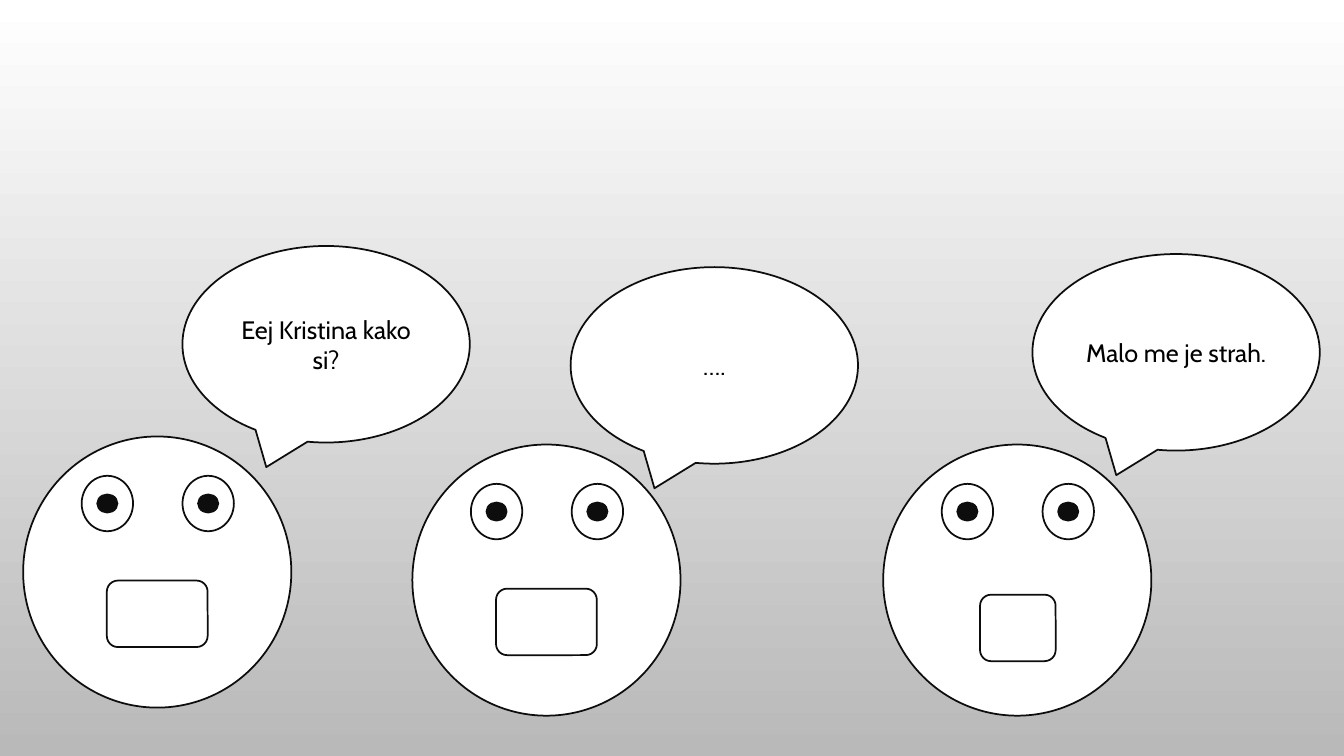
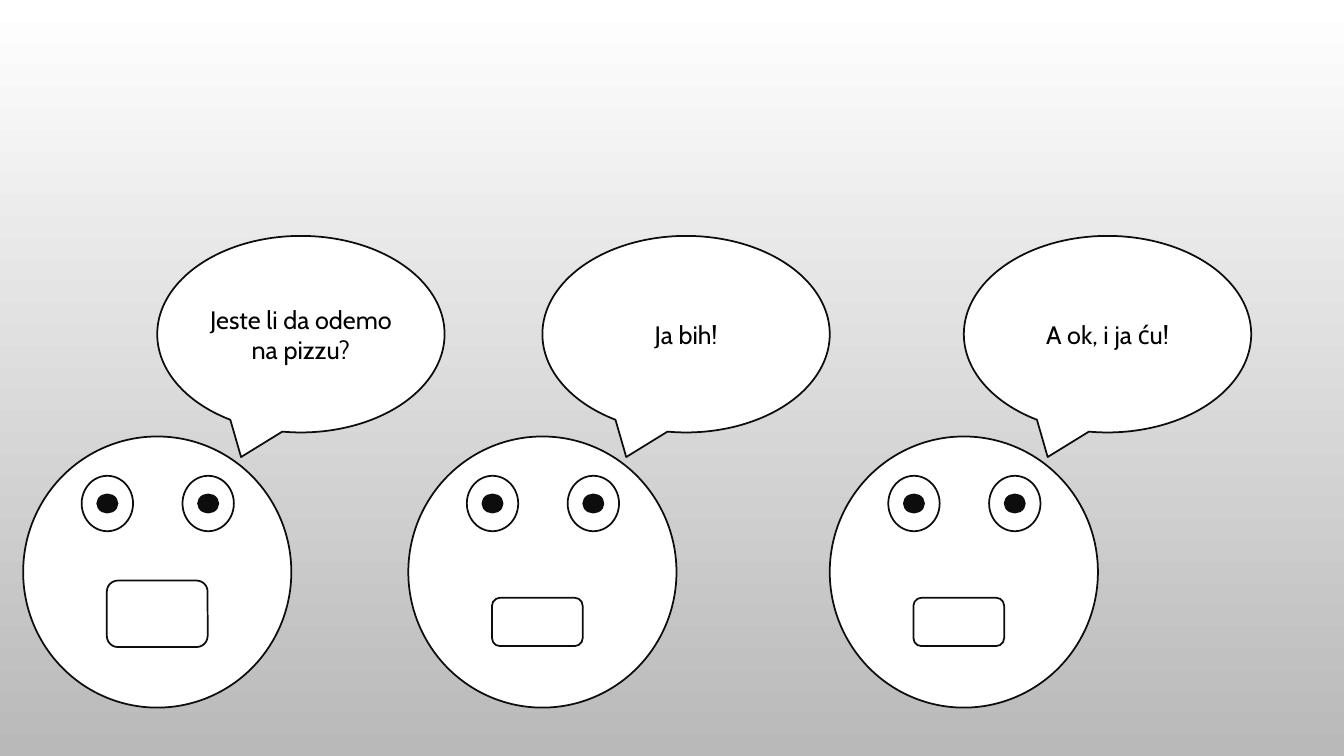
from dataclasses import dataclass

from pptx import Presentation
from pptx.dml.color import RGBColor
from pptx.enum.shapes import MSO_SHAPE
from pptx.enum.text import MSO_ANCHOR, PP_ALIGN
from pptx.util import Inches, Pt

OVAL = MSO_SHAPE.OVAL
ROUND = MSO_SHAPE.ROUNDED_RECTANGLE
CALLOUT = MSO_SHAPE.OVAL_CALLOUT
CENTER = PP_ALIGN.CENTER
MIDDLE = MSO_ANCHOR.MIDDLE


@dataclass(frozen=True)
class Theme:
    white: RGBColor = RGBColor(0xFF, 0xFF, 0xFF)
    gray: RGBColor = RGBColor(0xB9, 0xB9, 0xB9)
    ink: RGBColor = RGBColor(0x0D, 0x0D, 0x0D)
    text: RGBColor = RGBColor(0, 0, 0)
    font: str = "Cabin"
    size: Pt = Pt(18)
    line: Pt = Pt(1.25)


THEME = Theme()

# Sizes, and offsets from the top left corner of a head
HEAD = (2.66, 2.69)
EYE = (0.51, 0.55)
PUPIL = (0.2, 0.18)
BUBBLE = (2.85, 1.95)
EYES = (0.58, 1.58)
EYE_TOP = 0.39

# Mouths: left and top offset, width, height
WIDE = (0.83, 1.43, 1, 0.66)
SHORT = (0.96, 1.49, 0.75, 0.66)
SLIM = (0.83, 1.6, 0.9, 0.48)

# Each speaker: head corner, mouth, bubble offset, words
SCENES = [
    [
        ((0.23, 4.33), WIDE, (1.58, -1.89), "Eej Kristina kako si?"),
        ((4.09, 4.41), WIDE, (1.57, -1.76), "…."),
        ((8.76, 4.41), SHORT, (1.48, -1.89), "Malo me je strah."),
    ],
    [
        ((0.23, 4.33), WIDE, (1.33, -1.99), "Jeste li da odemo na pizzu?"),
        ((4.05, 4.33), SLIM, (1.33, -1.99), "Ja bih!"),
        ((8.23, 4.33), SLIM, (1.33, -1.99), "A ok, i ja ću!"),
    ],
]


def add_part(group, kind, left, top, size, fill=THEME.white):
    width, height = size
    part = group.shapes.add_shape(
        kind, Inches(left), Inches(top), Inches(width), Inches(height))
    part.shadow.inherit = False
    part.fill.solid()
    part.fill.fore_color.rgb = fill
    part.line.color.rgb = THEME.ink
    part.line.width = THEME.line
    return part


def add_eye(group, left, top):
    add_part(group, OVAL, left, top, EYE)
    inset_x, inset_y = [(eye - dot) / 2 for eye, dot in zip(EYE, PUPIL)]
    add_part(group, OVAL, left + inset_x, top + inset_y, PUPIL, THEME.ink)


def add_bubble(group, left, top, words):
    frame = add_part(group, CALLOUT, left, top, BUBBLE).text_frame
    frame.word_wrap = True
    frame.vertical_anchor = MIDDLE
    para = frame.paragraphs[0]
    para.text = words
    para.alignment = CENTER
    para.font.name = THEME.font
    para.font.size = THEME.size
    para.font.color.rgb = THEME.text


def add_speaker(slide, corner, mouth, offset, words):
    """Group a head, its eyes and mouth, and its speech bubble."""
    group = slide.shapes.add_group_shape()
    left, top = corner
    add_part(group, OVAL, left, top, HEAD)
    for eye in EYES:
        add_eye(group, left + eye, top + EYE_TOP)
    add_part(group, ROUND, left + mouth[0], top + mouth[1], mouth[2:])
    add_bubble(group, left + offset[0], top + offset[1], words)


def set_back(slide):
    fill = slide.background.fill
    fill.gradient()
    fill.gradient_angle = 270
    for stop, color in zip(fill.gradient_stops, (THEME.white, THEME.gray)):
        stop.color.rgb = color


def main():
    deck = Presentation()
    deck.slide_width = Inches(13.33)
    deck.slide_height = Inches(7.5)
    for scene in SCENES:
        slide = deck.slides.add_slide(deck.slide_layouts[6])
        set_back(slide)
        for speaker in scene:
            add_speaker(slide, *speaker)
    deck.save("out.pptx")


if __name__ == "__main__":
    main()
